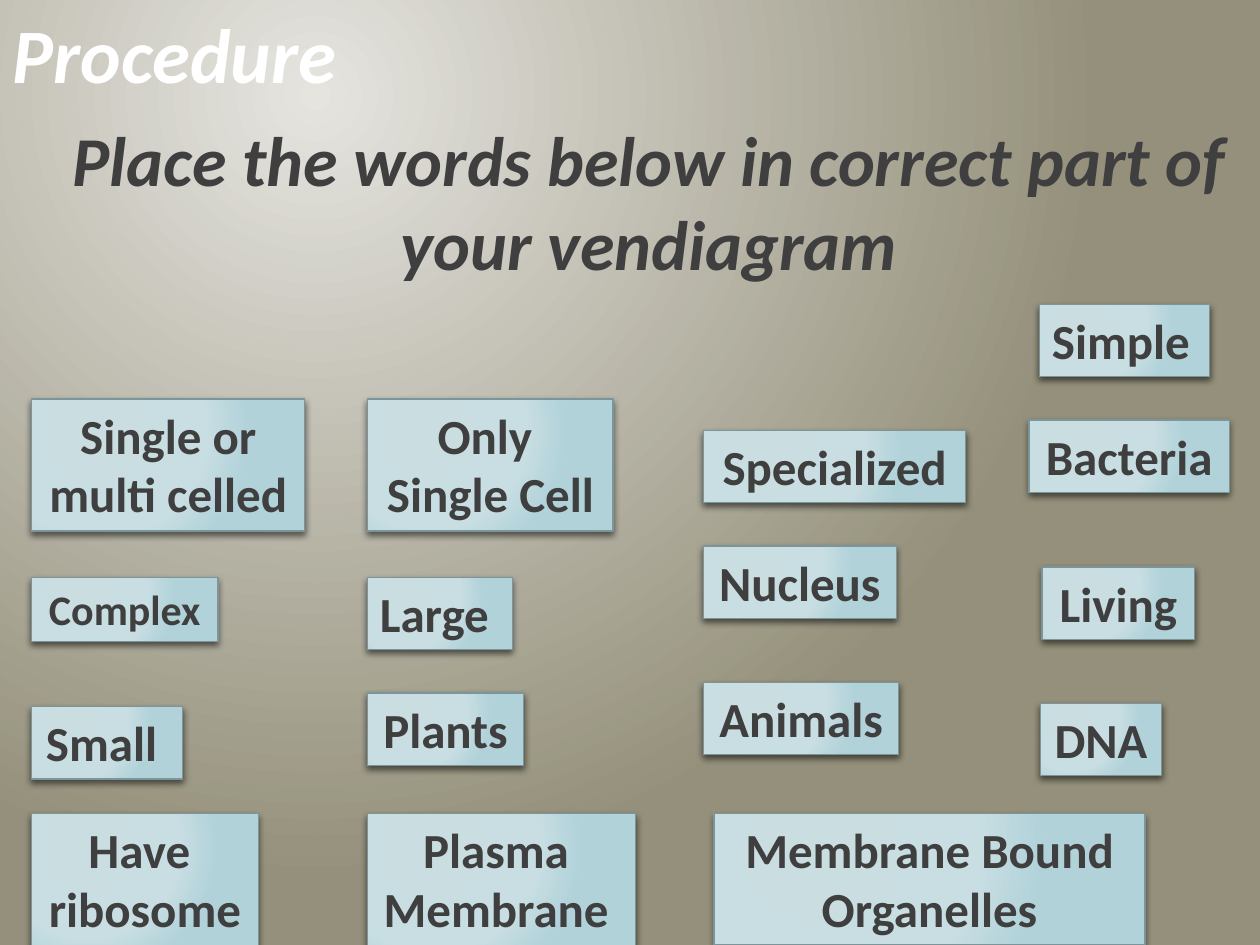
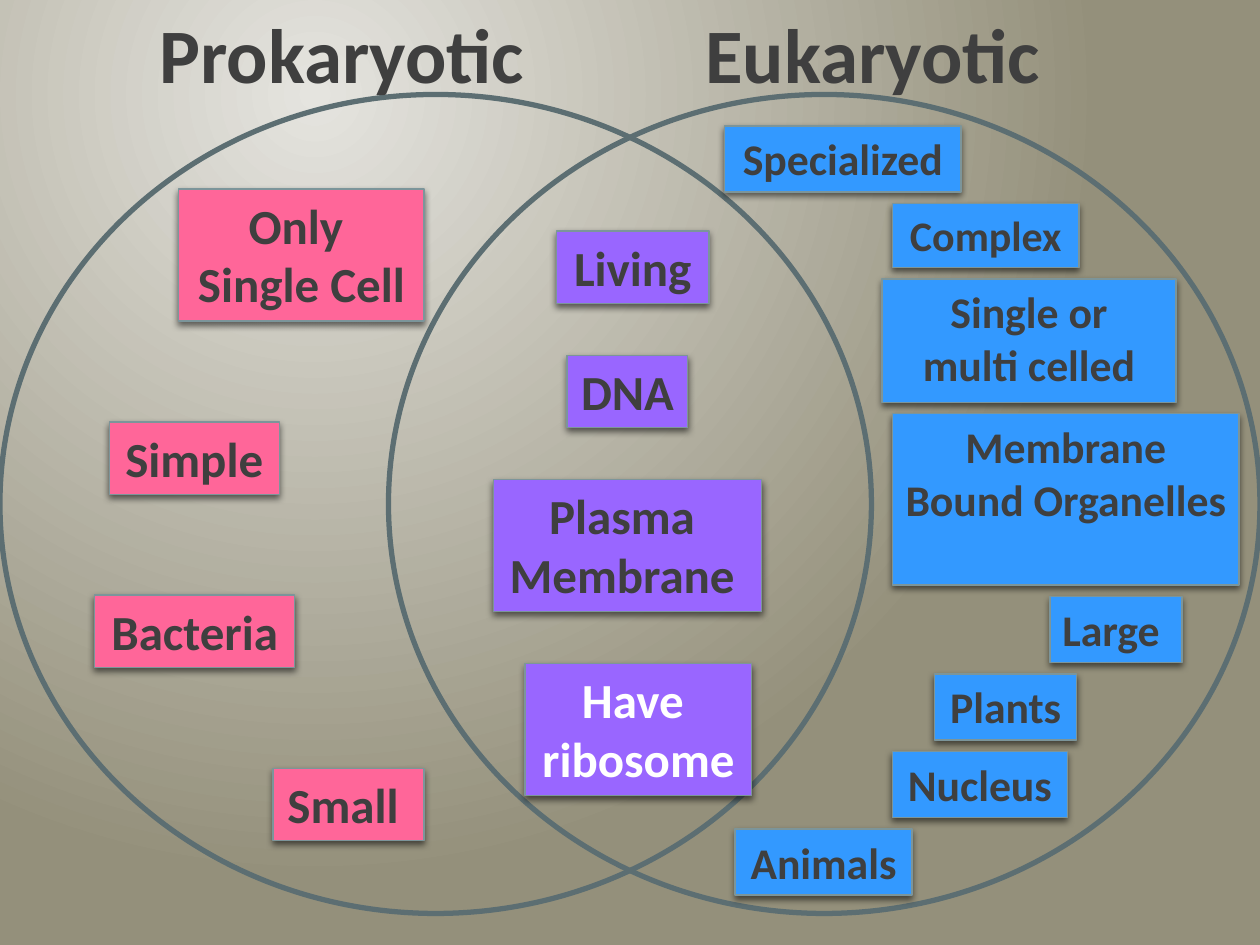
from dataclasses import dataclass
from typing import Optional

from lxml.etree import SubElement
from pptx import Presentation
from pptx.dml.color import RGBColor
from pptx.enum.shapes import MSO_SHAPE as Preset
from pptx.enum.text import MSO_ANCHOR as Anchor, MSO_AUTO_SIZE as AutoSize, PP_ALIGN as Align
from pptx.oxml.ns import qn
from pptx.util import Inches, Pt

COLORS = {
    "ink": "3F3F3F", "white": "FFFFFF", "black": "000000",
    "glow": "E5E4DF", "khaki": "94907B",
    "ice": "CADDE1", "mist": "C8DEE3", "teal": "B1D2D9",
    "card_edge": "7C959A", "ring": "5C6E72",
    "prokaryotic": "FF6699", "shared": "9966FF", "eukaryotic": "3399FF",
}
FONT = "Calibri"
WIDTH, HEIGHT = Inches(10), Inches(7.5)
COLUMNS, ROWS = 120, 90
CELL = WIDTH / COLUMNS
CELLS_PER_POINT = Pt(1) / CELL
LINE_HEIGHT = 1.22
PAD_X, PAD_Y = 2.4, 1.2
BASE_SIZE = 28

BACKDROP = [(0, "glow"), (100, "khaki")]
ICE_CARD = [(0, "ice"), (35, "ice"), (69, "mist"), (100, "teal")]

SINGLE_CELL = "Only \nSingle Cell"
MULTI_CELLED = "Single or\nmulti celled"
RIBOSOME = "Have \nribosome"
PLASMA = "Plasma \nMembrane "
ORGANELLES = "Membrane Bound Organelles"

# Columns that each term takes at the base text size, without padding
TERM_COLUMNS = {
    SINGLE_CELL: 21, MULTI_CELLED: 23.64, RIBOSOME: 19.2, PLASMA: 23.16,
    ORGANELLES: 38.64, "Specialized": 22.56, "Living": 12.12, "Plants": 12.48,
    "Animals": 16.2, "Nucleus": 15.96, "Complex": 17.92, "DNA": 9.12,
    "Small ": 12, "Large": 11.4, "Bacteria": 16.68, "Simple": 13.8,
}


@dataclass
class Card:
    term: str
    column: float
    row: float = 0
    size: float = BASE_SIZE
    columns: Optional[float] = None
    rows: Optional[float] = None
    ink: str = "ink"
    align: Align = Align.CENTER
    wrap: bool = False

    def __post_init__(self) -> None:
        if self.columns is None:
            self.columns = PAD_X + TERM_COLUMNS[self.term] * self.size / BASE_SIZE
        if self.rows is None:
            lines = self.term.count("\n") + 1
            self.rows = PAD_Y + lines * self.size * LINE_HEIGHT * CELLS_PER_POINT


@dataclass
class Stack:
    """Cards of one colour, set below each other with equal gaps."""
    fill: str
    top: float
    gap: float
    cards: list[Card]


def left_card(term: str, column: float, row: float = 0, size: float = BASE_SIZE) -> Card:
    return Card(term, column, row, size, align=Align.LEFT, wrap=True)


WORD_BANK = [
    Card(MULTI_CELLED, 3, 38), Card("Complex", 3, 55, 24),
    Card("Small ", 3, 67.3), Card(RIBOSOME, 3, 77.5),
    Card(SINGLE_CELL, 35, 38), left_card("Large", 35, 55),
    Card("Plants", 35, 66), Card(PLASMA, 35, 77.5),
    Card("Specialized", 67, 41), Card("Nucleus", 67, 52),
    Card("Animals", 67, 65), Card(ORGANELLES, 68, 77.5, rows=12.5, wrap=True),
    left_card("Simple", 99, 29), Card("Bacteria", 98, 40),
    Card("Living", 99.25, 54), Card("DNA", 99.1, 67),
]

VENN = [
    Stack("prokaryotic", 18, 9.6, [
        Card(SINGLE_CELL, 17), Card("Simple", 10.4),
        Card("Bacteria", 9), Card("Small ", 26),
    ]),
    Stack("shared", 22, 4.94, [
        Card("Living", 53), Card("DNA", 54),
        Card(PLASMA, 47), Card(RIBOSOME, 50, ink="white"),
    ]),
    Stack("eukaryotic", 12, 1.1, [
        Card("Specialized", 69, size=25), Card("Complex", 85, size=24),
        Card(MULTI_CELLED, 84, size=25, columns=28, rows=11.75, wrap=True),
        Card(ORGANELLES, 85, size=25, columns=33, rows=16.3, wrap=True),
        left_card("Large", 100, size=25), Card("Plants", 89, size=25),
        Card("Nucleus", 85, size=25), Card("Animals", 70, size=25),
    ]),
]


def rgb(color: str) -> RGBColor:
    return RGBColor.from_string(COLORS[color])


def box(column: float, row: float, columns: float, rows: float) -> list[int]:
    return [round(cells * CELL) for cells in (column, row, columns, rows)]


def fill_radial(fill, owner, stops: list, focus_top: int) -> None:
    """Give the fill a circular gradient; owner is the XML element that holds it."""
    fill.gradient()
    gradient = owner.find(".//" + qn("a:gradFill"))
    for child in list(gradient):
        gradient.remove(child)
    stop_list = SubElement(gradient, qn("a:gsLst"))
    for position, color in stops:
        stop = SubElement(stop_list, qn("a:gs"), pos=str(position * 1000))
        SubElement(stop, qn("a:srgbClr"), val=COLORS[color])
    circle = SubElement(gradient, qn("a:path"), path="circle")
    SubElement(circle, qn("a:fillToRect"), l="50000", t=str(focus_top * 1000),
               r="100000", b="100000")


def add_drop_shadow(shape) -> None:
    shape.shadow.inherit = False
    effects = shape._element.spPr.find(qn("a:effectLst"))
    shadow = SubElement(effects, qn("a:outerShdw"), blurRad=str(Pt(4)),
                        dist=str(Pt(2)), dir="5400000", rotWithShape="0")
    color = SubElement(shadow, qn("a:srgbClr"), val=COLORS["black"])
    SubElement(color, qn("a:alpha"), val="55000")


def write(shape, text: str, size: float, ink: str = "ink", align: Align = Align.LEFT,
          italic: bool = False, wrap: bool = False) -> None:
    frame = shape.text_frame
    frame.word_wrap = wrap
    frame.auto_size = AutoSize.NONE
    frame.vertical_anchor = Anchor.TOP
    for index, line in enumerate(text.split("\n")):
        paragraph = frame.add_paragraph() if index else frame.paragraphs[0]
        paragraph.alignment = align
        run = paragraph.add_run()
        run.text = line
        font = run.font
        font.name, font.size = FONT, Pt(size)
        font.bold, font.italic = True, italic
        font.color.rgb = rgb(ink)


def add_slide(deck, layout: int):
    slide = deck.slides.add_slide(deck.slide_layouts[layout])
    fill_radial(slide.background.fill, slide._element, BACKDROP, 20)
    return slide


def add_card(slide, card: Card, row: float, fill: Optional[str] = None) -> None:
    """Draw a term card; without a fill colour it gets the ice gradient."""
    shape = slide.shapes.add_shape(
        Preset.RECTANGLE, *box(card.column, row, card.columns, card.rows))
    if fill:
        shape.fill.solid()
        shape.fill.fore_color.rgb = rgb(fill)
    else:
        fill_radial(shape.fill, shape._element, ICE_CARD, 50)
    shape.line.color.rgb = rgb("card_edge")
    shape.line.width = Pt(0.75)
    add_drop_shadow(shape)
    write(shape, card.term, card.size, card.ink, card.align, wrap=card.wrap)


def add_stack(slide, stack: Stack) -> None:
    row = stack.top
    for card in stack.cards:
        add_card(slide, card, row, stack.fill)
        row += card.rows + stack.gap


def add_ring(slide, column: float) -> None:
    ring = slide.shapes.add_shape(Preset.OVAL, *box(column, 9, 83, 78))
    ring.fill.background()
    ring.line.color.rgb = rgb("ring")
    ring.line.width = Pt(3)
    ring.shadow.inherit = False


def build_procedure(deck) -> None:
    slide = add_slide(deck, 5)
    title = slide.shapes.title
    title.left, title.top, title.width, title.height = box(0, 0, COLUMNS, 10)
    write(title, "Procedure", 44, "white", italic=True, wrap=True)
    task = slide.shapes.add_textbox(*box(3.6, 10.5, COLUMNS - 3.6, 18))
    write(task, "Place the words below in correct part of your vendiagram", 40,
          align=Align.CENTER, italic=True, wrap=True)
    for card in WORD_BANK:
        add_card(slide, card, card.row)


def build_venn(deck) -> None:
    slide = add_slide(deck, 6)
    for column in (0, COLUMNS - 83):
        add_ring(slide, column)
    for cell_type, column, columns in (("Prokaryotic", 14, 39.5), ("Eukaryotic", 66, 36.2)):
        heading = slide.shapes.add_textbox(*box(column, 0, columns, 10))
        write(heading, cell_type, 44)
    for stack in VENN:
        add_stack(slide, stack)


def main() -> None:
    deck = Presentation()
    deck.slide_width, deck.slide_height = WIDTH, HEIGHT
    build_procedure(deck)
    build_venn(deck)
    deck.save("out.pptx")


if __name__ == "__main__":
    main()
